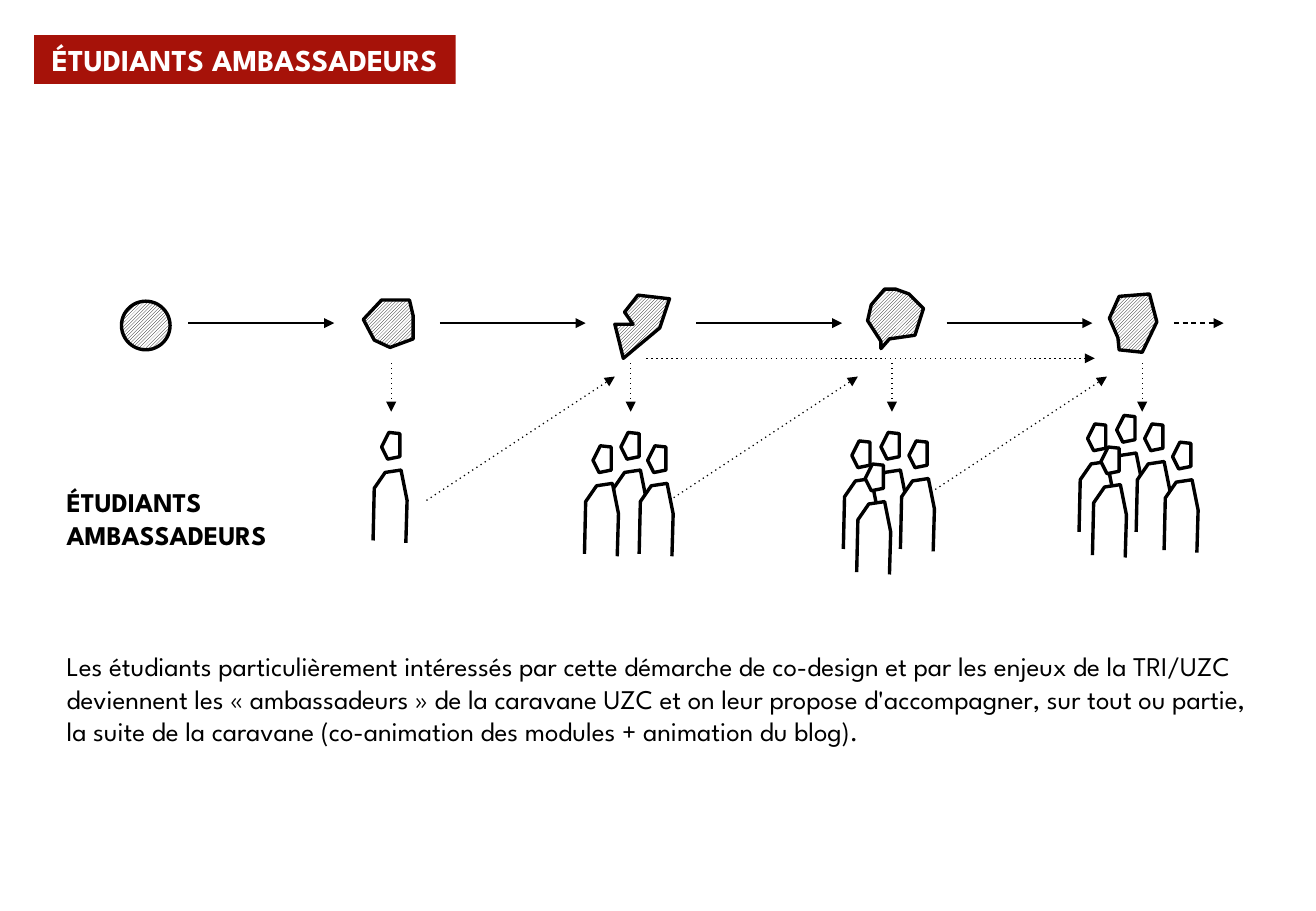
from dataclasses import dataclass

from pptx import Presentation
from pptx.dml.color import RGBColor
from pptx.enum import dml, shapes, text
from pptx.oxml.xmlchemy import OxmlElement
from pptx.util import Emu, Pt

PX = 9144  # EMU per px, 100 px to the inch
FONT = "League Spartan"
BLACK, WHITE, RED = "000000", "FFFFFF", "A61209"

Point = tuple[int, int]


@dataclass
class Arrow:
    start: Point
    end: Point
    dash: str = "solid"


@dataclass
class Label:
    box: tuple[int, int, int, int]
    lines: list[str]
    bold: bool = False


def px(n: int) -> Emu:
    return Emu(n * PX)


def color(code: str) -> RGBColor:
    return RGBColor.from_string(code)


def add_run(para, words: str, size: int, code: str, bold: bool) -> None:
    run = para.add_run()
    run.text = words
    run.font.name = FONT
    run.font.size = Pt(size)
    run.font.bold = bold
    run.font.color.rgb = color(code)


def outline(shape) -> None:
    shape.shadow.inherit = False
    shape.line.color.rgb = color(BLACK)
    shape.line.width = Pt(2)


def hatch(shape) -> None:
    outline(shape)
    shape.fill.patterned()
    shape.fill.pattern = dml.MSO_PATTERN.LIGHT_UPWARD_DIAGONAL
    shape.fill.fore_color.rgb = color(BLACK)
    shape.fill.back_color.rgb = color(WHITE)


def add_path(target, points: list[Point], close: bool):
    pen = target.build_freeform(*points[0], scale=PX)
    pen.add_line_segments(points[1:], close=close)
    return pen.convert_to_shape()


def add_arrow(target, arrow: Arrow) -> None:
    ends = [px(n) for n in (*arrow.start, *arrow.end)]
    link = target.add_connector(shapes.MSO_CONNECTOR.STRAIGHT, *ends)
    link.line.color.rgb = color(BLACK)
    link.line.width = Pt(0.75)
    for tag, key, value in (("a:prstDash", "val", arrow.dash),
                            ("a:tailEnd", "type", "triangle")):
        part = OxmlElement(tag)
        part.set(key, value)
        link.line._get_or_add_ln().append(part)
    link._element.spPr.append(OxmlElement("a:effectLst"))


def add_person(target, x: int, y: int) -> None:
    group = target.add_group_shape()
    for points, close in ((BODY, False), (HEAD, True)):
        part = add_path(group.shapes, [(x + a, y + b) for a, b in points], close)
        outline(part)
        part.fill.solid()
        part.fill.fore_color.rgb = color(WHITE)


def add_label(target, label: Label) -> None:
    frame = target.add_textbox(*map(px, label.box)).text_frame
    frame.word_wrap = True
    for i, line in enumerate(label.lines):
        para = frame.add_paragraph() if i else frame.paragraphs[0]
        add_run(para, line, 16, BLACK, label.bold)


# Person, measured from the top left of the body
BODY = [(0, 58), (1, 15), (10, 2), (23, 0), (28, 25), (27, 60)]
HEAD = [(22, -11), (12, -9), (7, -19), (13, -31), (22, -30)]

# Hatched stages after the first circle
STAGES = [
    [(299, 263), (314, 247), (337, 247), (340, 260), (340, 279), (321, 286),
     (308, 280)],
    [(514, 257), (525, 243), (551, 246), (543, 270), (513, 295), (506, 267),
     (521, 267)],
    [(725, 281), (714, 264), (717, 251), (728, 238), (737, 238), (748, 242),
     (760, 254), (753, 276), (732, 279), (725, 287)],
    [(920, 278), (913, 262), (921, 244), (946, 242), (952, 265), (940, 290),
     (921, 288)],
]

# Arrows: between stages, down to the people, back up to the next stage
ARROWS = [
    *(Arrow((x, 266), (x + 120, 266)) for x in (155, 362, 573, 779)),
    *(Arrow((x, 299), (x, 339), "dot") for x in (322, 519, 734, 940)),
    *(Arrow((x, 412), (x + 155, 310), "dot") for x in (351, 551, 756)),
    Arrow((532, 295), (901, 295), "dot"),
    Arrow((966, 266), (1007, 266), "dash"),
]

# People, from back to front
PEOPLE = [
    (307, 387),
    (504, 387), (481, 398), (526, 398),
    (718, 387), (741, 394), (694, 394), (705, 413),
    (912, 373), (935, 380), (888, 380), (899, 399), (958, 395),
]

LABELS = [
    Label((45, 395, 577, 64), ["ÉTUDIANTS", "AMBASSADEURS"], True),
    Label((45, 530, 998, 118), [
        "Les étudiants particulièrement intéressés par cette démarche de "
        "co-design et par les enjeux de la TRI/UZC deviennent les "
        "« ambassadeurs » de la caravane UZC et on leur propose "
        "d'accompagner, sur tout ou partie, la suite de la caravane "
        "(co-animation des modules + animation du blog)."]),
]


def main() -> None:
    deck = Presentation()
    deck.slide_width, deck.slide_height = px(1083), px(750)
    slide = deck.slides.add_slide(deck.slide_layouts[5])
    canvas = slide.shapes

    # Title
    title = canvas.title
    title.left, title.top, title.width, title.height = map(px, (28, 29, 347, 40))
    title.fill.solid()
    title.fill.fore_color.rgb = color(RED)
    frame = title.text_frame
    frame.word_wrap = False
    frame.auto_size = text.MSO_AUTO_SIZE.NONE
    frame.vertical_anchor = text.MSO_ANCHOR.MIDDLE
    para = frame.paragraphs[0]
    para.alignment = text.PP_ALIGN.CENTER
    add_run(para, "ÉTUDIANTS AMBASSADEURS", 18, WHITE, True)

    # Stages
    hatch(canvas.add_shape(shapes.MSO_SHAPE.OVAL, *map(px, (100, 248, 40, 40))))
    for points in STAGES:
        hatch(add_path(canvas, points, True))

    # Arrows, people and text
    for arrow in ARROWS:
        add_arrow(canvas, arrow)
    for spot in PEOPLE:
        add_person(canvas, *spot)
    for label in LABELS:
        add_label(canvas, label)

    deck.save("out.pptx")


if __name__ == "__main__":
    main()
